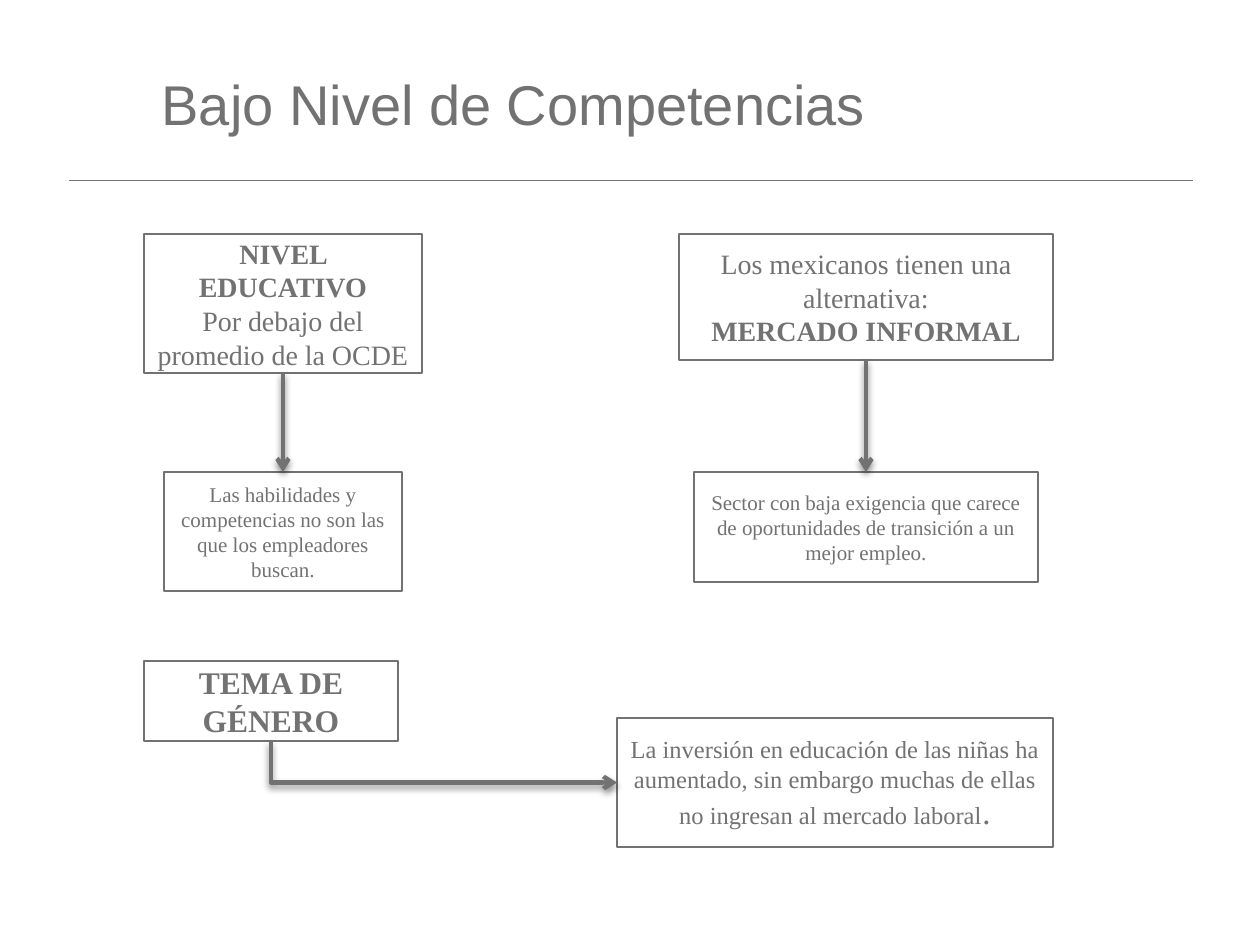
"""Builds the slide on low skill levels as boxes joined by arrows."""
import pptx
import pptx.util
import pptx.dml.color
import pptx.enum.shapes
import pptx.enum.text
import pptx.oxml
import pptx.oxml.ns

COLORS = {"gray": "727272", "white": "FFFFFF", "shadow": "000000"}
SERIF = "Times New Roman"
EMU_PER_PX = 914400 / 126
TOP, LEFT, BOTTOM = 0, 1, 2

TITLE = {"text": "Bajo Nivel de Competencias", "place": (149, 33, 1022, 141)}
RULE = (69, 180, 1193, 180)

BOXES = {
    "education": ((144, 234, 278, 139), [
        [("NIVEL EDUCATIVO", {"size": 16, "bold": True})],
        [("Por debajo del promedio de la OCDE", {"size": 16})]]),
    "skills": ((164, 472, 238, 119), [
        [("Las habilidades y competencias no son las que los empleadores buscan.",
          {"size": 12})]]),
    "informal": ((679, 234, 374, 126), [
        [("Los mexicanos tienen una alternativa:", {"size": 16})],
        [("MERCADO INFORMAL", {"size": 16, "bold": True})]]),
    "sector": ((694, 472, 344, 110), [
        [("Sector con baja exigencia que carece de oportunidades de transición "
          "a un mejor empleo.", {"size": 12})]]),
    "gender": ((144, 661, 254, 80), [
        [("TEMA DE GÉNERO", {"size": 18, "bold": True})]]),
    "investment": ((617, 718, 436, 129), [
        [("La inversión en educación de las niñas ha aumentado, sin embargo "
          "muchas de ellas no ingresan al mercado laboral", {"size": 14}),
         (".", {"size": 18, "name": "TeX Gyre Schola"})]]),
}
ARROWS = [("education", "skills", TOP), ("informal", "sector", TOP),
          ("gender", "investment", LEFT)]


def px(value):
    return pptx.util.Emu(round(value * EMU_PER_PX))


def color(name):
    return pptx.dml.color.RGBColor.from_string(COLORS[name])


def format_font(font, values):
    for name, value in values.items():
        setattr(font, name, pptx.util.Pt(value) if name == "size" else value)
    font.color.rgb = color("gray")


def format_line(line, width):
    line.color.rgb = color("gray")
    line.width = pptx.util.Pt(width)


def add_effects(connector, shadow=""):
    namespace = pptx.oxml.ns.nsdecls("a")
    connector._element.spPr.append(
        pptx.oxml.parse_xml(f"<a:effectLst {namespace}>{shadow}</a:effectLst>"))


def add_title(slide):
    title = slide.shapes.title
    title.left, title.top, title.width, title.height = map(px, TITLE["place"])
    frame = title.text_frame
    frame.text = TITLE["text"]
    frame.vertical_anchor = pptx.enum.text.MSO_ANCHOR.MIDDLE
    paragraph = frame.paragraphs[0]
    paragraph.alignment = pptx.enum.text.PP_ALIGN.LEFT
    format_font(paragraph.runs[0].font, {"size": 32, "name": "Arial"})


def add_rule(slide):
    rule = slide.shapes.add_connector(
        pptx.enum.shapes.MSO_CONNECTOR.STRAIGHT, *map(px, RULE))
    format_line(rule.line, 0.5)
    add_effects(rule)


def add_box(slide, place, paragraphs):
    box = slide.shapes.add_shape(
        pptx.enum.shapes.MSO_SHAPE.RECTANGLE, *map(px, place))
    box.shadow.inherit = False
    box.fill.solid()
    box.fill.fore_color.rgb = color("white")
    format_line(box.line, 1.5)
    frame = box.text_frame
    frame.word_wrap = True
    frame.vertical_anchor = pptx.enum.text.MSO_ANCHOR.MIDDLE
    for index, runs in enumerate(paragraphs):
        paragraph = frame.add_paragraph() if index else frame.paragraphs[0]
        paragraph.alignment = pptx.enum.text.PP_ALIGN.CENTER
        for text, values in runs:
            run = paragraph.add_run()
            run.text = text
            format_font(run.font, {"name": SERIF, **values})
    return box


def bend_once(connector):
    center_x = connector.left + connector.width // 2
    center_y = connector.top + connector.height // 2
    width, height = connector.height, connector.width
    connector.left, connector.top = center_x - width // 2, center_y - height // 2
    connector.width, connector.height = width, height
    connector.rotation = 270
    connector._element.spPr.xfrm.set("rot", "16200000")
    connector._element.spPr.xfrm.set("flipH", "1")
    connector._element.spPr.prstGeom.set("prst", "bentConnector2")


def add_arrow(slide, start, end, end_side):
    kinds = pptx.enum.shapes.MSO_CONNECTOR
    kind = kinds.STRAIGHT if end_side == TOP else kinds.ELBOW
    arrow = slide.shapes.add_connector(kind, 0, 0, 0, 0)
    arrow.begin_connect(start, BOTTOM)
    arrow.end_connect(end, end_side)
    if kind == kinds.ELBOW:
        bend_once(arrow)
    format_line(arrow.line, 2.5)
    namespace = pptx.oxml.ns.nsdecls("a")
    arrow.line._get_or_add_ln().append(
        pptx.oxml.parse_xml(f'<a:tailEnd {namespace} type="arrow"/>'))
    add_effects(arrow, (
        '<a:outerShdw blurRad="50800" dist="25400" dir="5400000" rotWithShape="0">'
        f'<a:srgbClr val="{COLORS["shadow"]}"><a:alpha val="45000"/></a:srgbClr>'
        "</a:outerShdw>"))


def main():
    presentation = pptx.Presentation()
    presentation.slide_width = px(1260)
    presentation.slide_height = px(945)
    slide = presentation.slides.add_slide(presentation.slide_layouts[5])
    add_rule(slide)
    add_title(slide)
    boxes = {name: add_box(slide, *box) for name, box in BOXES.items()}
    for start, end, end_side in ARROWS:
        add_arrow(slide, boxes[start], boxes[end], end_side)
    presentation.save("out.pptx")


if __name__ == "__main__":
    main()
